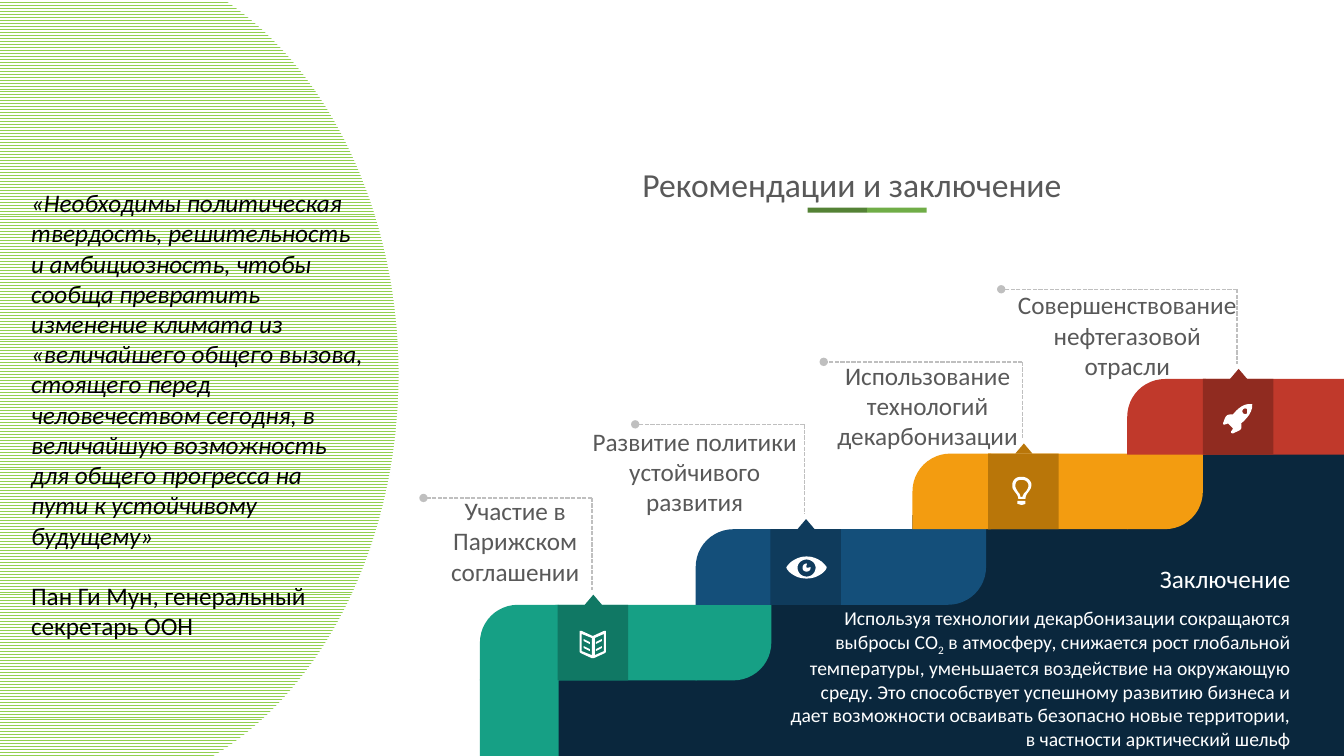
from pptx import Presentation
from pptx.dml.color import RGBColor
from pptx.enum.dml import MSO_LINE, MSO_PATTERN
from pptx.enum.shapes import MSO_CONNECTOR, MSO_SHAPE as SHAPE
from pptx.enum.text import MSO_ANCHOR as ANCHOR, MSO_AUTO_SIZE as AUTO, PP_ALIGN as ALIGN
from pptx.oxml import parse_xml
from pptx.oxml.ns import nsdecls
from pptx.util import Pt

PX = 9144  # 100 px to the inch
WIDTH, HEIGHT = 1333, 750
CAP = 75  # height of a stair band and width of its rounded end
BADGE = 70
GREY, WHITE, NAVY = "595959", "FFFFFF", "0A273D"

# Icon outlines: a pair is a corner, six numbers are a Bezier segment
BOOK = [
    [(26, 0), (24, 0), (13, 5), (2, 0), (0, 0), (0, 21), (1, 22), (12, 27),
     (14, 27), (25, 22), (26, 21)],
    [(12, 24), (2, 20), (2, 3), (12, 7)],
    [(24, 20), (15, 24), (15, 7), (24, 3)],
    *[[(10, y + 3), (4, y), (4, y + 2), (10, y + 5)] for y in (8, 15)],
    *[[(22, y), (16, y + 3), (16, y + 5), (22, y + 2)] for y in (8, 15)],
]
EYE = [
    [(20, 0), (7, 0, 0, 10, 0, 11), (0, 13, 7, 22, 20, 22),
     (33, 22, 40, 13, 40, 11), (40, 10, 33, 0, 20, 0)],
    [(20, 20), (15, 20, 11, 16, 11, 11), (11, 7, 15, 3, 20, 3),
     (25, 3, 29, 7, 29, 11), (29, 16, 25, 20, 20, 20)],
    [(20, 11), (19, 10, 21, 7, 20, 7), (18, 7, 16, 9, 16, 11), (16, 14, 18, 15, 20, 15),
     (22, 15, 24, 14, 24, 11), (24, 10, 21, 12, 20, 11)],
]
BULB = [
    [(6, 27), (8, 27, 9, 28, 10, 28), (12, 28, 13, 27, 14, 27), (14, 24), (6, 24)],
    [(14, 22), (14, 16, 20, 14, 20, 8), (20, 5, 17, 0, 10, 0), (3, 0, 1, 5, 1, 8),
     (0, 14, 7, 16, 7, 22)],
    [(4, 9), (4, 5, 6, 3, 10, 3), (14, 3, 17, 5, 17, 9), (17, 11, 16, 12, 15, 14),
     (13, 16, 12, 17, 11, 20), (9, 20), (9, 17, 7, 16, 6, 14), (5, 12, 4, 11, 4, 9)],
]
ROCKET = [
    [(18, 21), (18, 21, 30, 12, 29, 2), (28, 2), (19, 0, 10, 12, 10, 12),
     (3, 12, 3, 13, 0, 21), (0, 22, 1, 23, 2, 22), (3, 22, 5, 21, 5, 21), (10, 26),
     (10, 26, 9, 28, 8, 29), (8, 30, 8, 31, 10, 31), (18, 27, 19, 28, 18, 21)],
    [(20, 11), (19, 10, 19, 8, 20, 7), (21, 6, 23, 6, 24, 7), (24, 8, 24, 10, 24, 11),
     (23, 12, 21, 12, 20, 11)],
]

# Steps: band left and top, right cap, badge left, colours, callout dot, label, icon
STEPS = [
    dict(left=476, top=600, right=690, badge=553, color="16A085", dark="107864",
         dot=(420, 494), label=(437, 505, 148, 63), icon=BOOK, shift=(22, 26),
         text="Участие в Парижском соглашении"),
    dict(left=690, top=525, right=903, badge=764, color="144F7A", dark="0F3B5C",
         dot=(630, 421), label=(572, 436, 234, 63), icon=EYE, shift=(16, 27),
         text="Развитие политики устойчивого развития"),
    dict(left=905, top=450, right=1118, badge=980, color="F39C10", dark="B97609",
         dot=(817, 359), label=(819, 366, 202, 73), icon=BULB, shift=(23, 23),
         text="Использование технологий декарбонизации"),
    dict(left=1118, top=376, right=WIDTH, badge=1193, color="C0392B", dark="902B20",
         dot=(993, 287), label=(1002, 301, 232, 63), icon=ROCKET, shift=(20, 23),
         text="Совершенствование нефтегазовой отрасли"),
]


def rgb(color):
    return RGBColor.from_string(color)


def emu(*lengths):
    return [length * PX for length in lengths]


def paint(shape, color):
    shape.shadow.inherit = False
    shape.fill.solid()
    shape.fill.fore_color.rgb = rgb(color)
    shape.line.fill.background()


def add_block(slide, box, color, kind=SHAPE.RECTANGLE, flip=None):
    shape = slide.shapes.add_shape(kind, *emu(*box))
    paint(shape, color)
    if flip:
        shape.adjustments[0] = 0.5
        shape.element.spPr.xfrm.set(flip, "1")


def add_dashed(slide, start, end, dot=False):
    line = slide.shapes.add_connector(MSO_CONNECTOR.STRAIGHT, *emu(*start, *end))
    line.line.color.rgb = rgb("BFBFBF")
    line.line.width = Pt(1)
    line.line.dash_style = MSO_LINE.SQUARE_DOT
    if dot:
        line.line._get_or_add_ln().append(parse_xml(f'<a:tailEnd type="oval" {nsdecls("a")}/>'))
    line.element.spPr.append(parse_xml(f'<a:effectLst {nsdecls("a")}/>'))


def add_text(slide, box, paragraphs, color, inset=(7, 4), **frame_format):
    """Each paragraph is (runs, size, font format, paragraph format)."""
    frame = slide.shapes.add_textbox(*emu(*box)).text_frame
    frame.word_wrap = True
    frame.margin_left = frame.margin_right = inset[0] * PX
    frame.margin_top = frame.margin_bottom = inset[1] * PX
    for name, value in frame_format.items():
        setattr(frame, name, value)
    for index, (runs, size, font_format, layout) in enumerate(paragraphs):
        paragraph = frame.add_paragraph() if index else frame.paragraphs[0]
        for name, value in layout.items():
            setattr(paragraph, name, value)
        for text in runs:
            run = paragraph.add_run()
            run.text = text
            run.font.color.rgb = rgb(color)
            for name, value in dict(name="Calibri", size=Pt(size), **font_format).items():
                setattr(run.font, name, value)
            if text == "2":  # subscript of the formula
                run._r.get_or_add_rPr().set("baseline", "-25000")


def flatten(contour, steps=8):
    points = [contour[0]]
    for segment in contour[1:]:
        if len(segment) == 2:
            points.append(segment)
            continue
        x0, y0 = points[-1]
        x1, y1, x2, y2, x3, y3 = segment
        for i in range(1, steps + 1):
            t = i / steps
            a, b, c, d = (1 - t) ** 3, 3 * t * (1 - t) ** 2, 3 * t * t * (1 - t), t ** 3
            points.append((a * x0 + b * x1 + c * x2 + d * x3, a * y0 + b * y1 + c * y2 + d * y3))
    return [(x * 10, y * 10) for x, y in points]  # tenths of a px keep curves smooth


def add_icon(slide, left, top, contours):
    first, *others = [flatten(contour) for contour in contours]
    builder = slide.shapes.build_freeform(*first[0], scale=PX / 10)
    builder.add_line_segments(first[1:], close=True)
    for points in others:
        builder.move_to(*points[0])
        builder.add_line_segments(points[1:], close=True)
    paint(builder.convert_to_shape(*emu(left, top)), WHITE)


def add_quote(slide, box):
    ellipse = slide.shapes.add_shape(SHAPE.OVAL, *emu(-232, -45, 628, 833))
    ellipse.shadow.inherit = False
    ellipse.fill.patterned()
    ellipse.fill.pattern = MSO_PATTERN.ZIG_ZAG
    ellipse.fill.fore_color.rgb = rgb("92D050")
    ellipse.fill.back_color.rgb = rgb(WHITE)
    ellipse.line.color.rgb = rgb(WHITE)
    ellipse.line.width = Pt(1)
    quote = ("«Необходимы политическая твердость, решительность и амбициозность, чтобы сообща "
             "превратить изменение климата из «величайшего общего вызова, стоящего перед "
             "человечеством сегодня, в величайшую возможность для общего прогресса на пути "
             "к устойчивому будущему»")
    add_text(slide, box, [
        ([quote], 18, dict(italic=True), {}),
        (["Пан Ги Мун, генеральный секретарь ООН"], 18, {}, dict(space_before=Pt(21.6))),
    ], "000000", inset=(10, 5), auto_size=AUTO.SHAPE_TO_FIT_TEXT)


def add_title(slide, left, top, width, height):
    layout = dict(alignment=ALIGN.CENTER, line_spacing=1.07, space_after=Pt(8))
    add_text(slide, (left, top, width, height), [(["Рекомендации и заключение"], 24, {}, layout)],
             GREY, inset=(10, 5), auto_size=AUTO.SHAPE_TO_FIT_TEXT)
    for index, color in enumerate(["548235", "70AD47"]):
        add_block(slide, (left + 178 + 59 * index, top + 51, 59, 5), color)


def add_band(slide, left, top, right, color):
    add_block(slide, (left, top, CAP + 3, CAP), color, SHAPE.ROUND_1_RECTANGLE, "flipH")
    add_block(slide, (left + CAP, top, right - left - CAP + 1, CAP), color)
    if right < WIDTH:
        add_block(slide, (right, top, CAP, CAP), color, SHAPE.ROUND_1_RECTANGLE, "flipV")


def add_stairs(slide):
    # Dark ground under the steps
    for left, top in [(1120, 426), (905, 511), (695, 562), (540, 637)]:
        add_block(slide, (left, top, min(219, WIDTH - left), HEIGHT - top), NAVY)
    add_block(slide, (476, 674, 78, 76), STEPS[0]["color"])
    for step in STEPS:
        add_band(slide, step["left"], step["top"], step["right"], step["color"])


def add_callout(slide, step):
    badge, top = step["badge"], step["top"]
    corner = (badge + 34, step["dot"][1])
    add_dashed(slide, corner, step["dot"], dot=True)
    add_dashed(slide, corner, (corner[0], top - 15))
    add_text(slide, step["label"], [([step["text"]], 18, {}, dict(alignment=ALIGN.CENTER))],
             GREY, vertical_anchor=ANCHOR.MIDDLE)
    # Badge with pointer and icon
    add_block(slide, (badge, top, BADGE, CAP), step["dark"])
    add_block(slide, (badge + 27, top - 10, 17, 10), step["dark"], SHAPE.ISOSCELES_TRIANGLE)
    add_icon(slide, badge + step["shift"][0], top + step["shift"][1], step["icon"])


def add_conclusion(slide, box):
    layout = dict(alignment=ALIGN.RIGHT, space_after=Pt(6))
    body = ["Используя технологии декарбонизации сокращаются выбросы CO", "2",
            " в атмосферу, снижается рост глобальной температуры, уменьшается воздействие на "
            "окружающую среду. Это способствует успешному развитию бизнеса и дает возможности "
            "осваивать безопасно новые территории, в частности арктический шельф"]
    add_text(slide, box, [
        (["Заключение"], 18, {}, dict(layout, space_before=Pt(3.6))),
        (body, 14, {}, dict(layout, space_before=Pt(2.8))),
    ], WHITE)


def main():
    presentation = Presentation()
    presentation.slide_width, presentation.slide_height = emu(WIDTH, HEIGHT)
    slide = presentation.slides.add_slide(presentation.slide_layouts[6])
    add_quote(slide, (21, 181, 349, 434))
    add_stairs(slide)
    for step in STEPS:
        add_callout(slide, step)
    add_conclusion(slide, (769, 555, 518, 123))
    add_title(slide, 623, 155, 444, 53)
    presentation.save("out.pptx")


if __name__ == "__main__":
    main()
